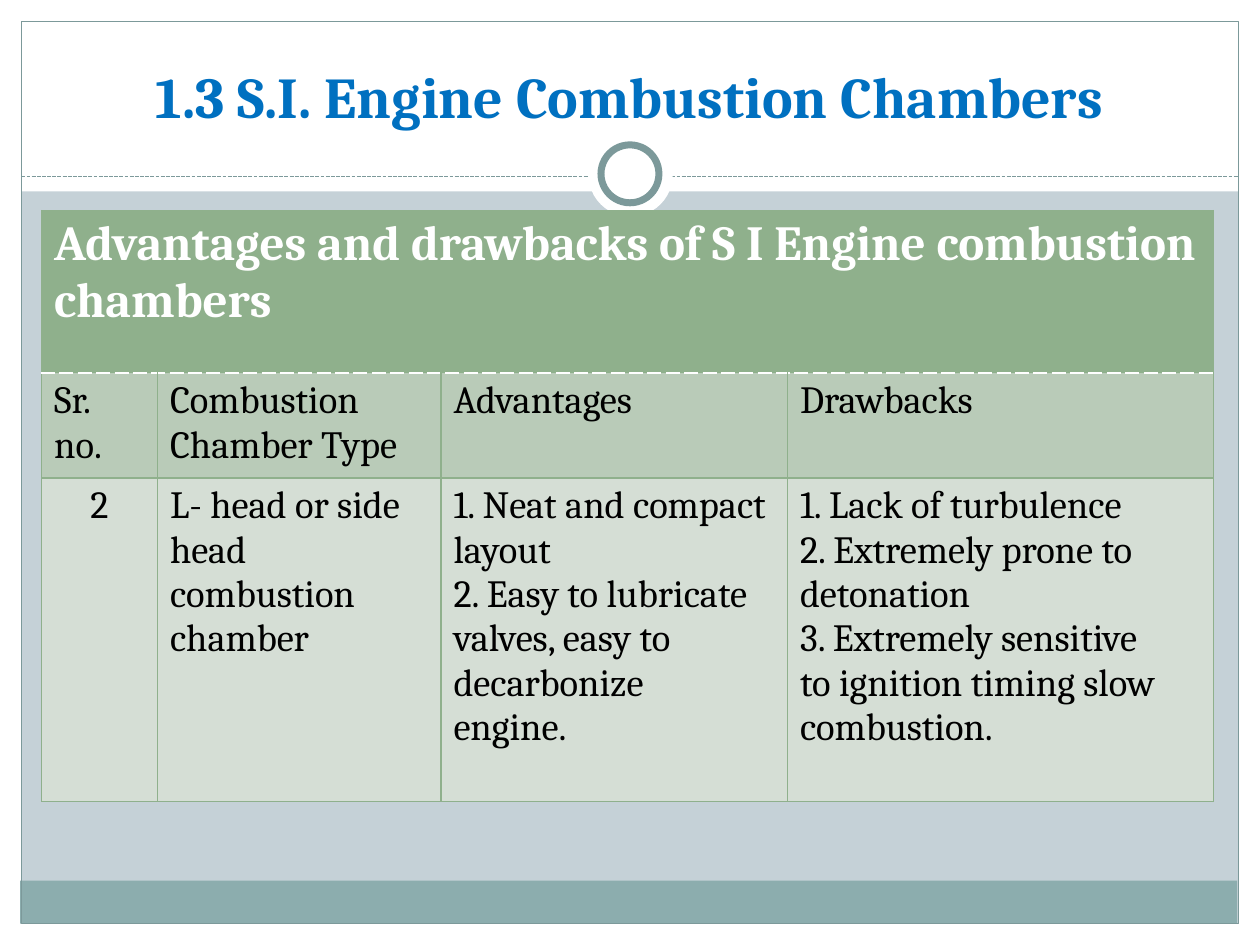
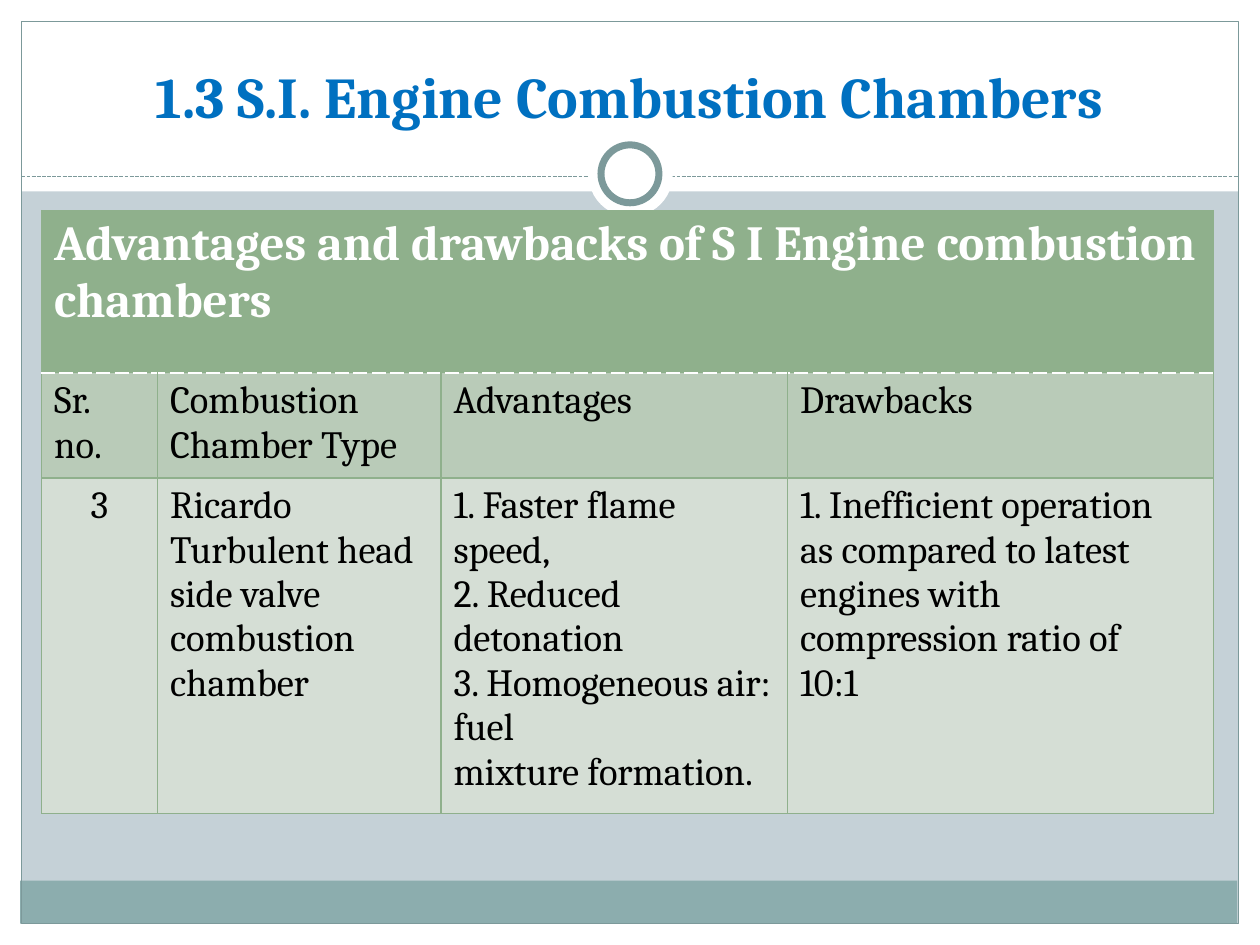
from lxml import etree
from pptx import Presentation
from pptx.dml.color import RGBColor
from pptx.enum.dml import MSO_LINE
from pptx.enum.shapes import MSO_CONNECTOR, MSO_SHAPE
from pptx.enum.text import MSO_ANCHOR, PP_ALIGN
from pptx.oxml.ns import qn
from pptx.util import Inches, Pt

FONT = "Cambria"
WHITE, BLACK = "FFFFFF", "000000"
BACKGROUND, FOOTER, FRAME = "C5D1D7", "8CADAE", "7C999A"
TITLE_BLUE = "0070C0"
GREEN, GREEN_MEDIUM, GREEN_LIGHT = "8FB08C", "B9CBB8", "D5DED5"

TITLE = "1.3 S.I. Engine Combustion Chambers"
TABLE_HEADING = "Advantages and drawbacks of S I Engine combustion chambers"
COLUMN_HEADINGS = ["Sr. no.", "Combustion Chamber Type", "Advantages", "Drawbacks"]
COLUMN_WIDTHS = [0.92, 2.25, 2.75, 3.38]
ROW_HEIGHTS = [1.29, 0.8, 2.57]

CHAMBERS = [
    [
        "2",
        "L- head or side head combustion chamber",
        "1. Neat and compact layout\n"
        "2. Easy to lubricate valves, easy to decarbonize\n"
        "engine.",
        "1. Lack of turbulence\n2. Extremely prone to\ndetonation\n"
        "3. Extremely sensitive\nto ignition timing slow\ncombustion.",
    ],
    [
        "3",
        "Ricardo Turbulent head side valve combustion chamber",
        "1. Faster flame speed,\n2. Reduced detonation\n"
        "3. Homogeneous air: fuel\nmixture formation.",
        "1. Inefficient operation\nas compared to latest\nengines with\n"
        "compression ratio of\n10:1",
    ],
]


def color(hex_string):
    return RGBColor.from_string(hex_string)


def set_borders(cell, top=(GREEN, 0.75, "solid"), bottom=(GREEN, 0.75, "solid")):
    """Draw all four cell borders; top and bottom are (colour, points, dash)."""
    side = (GREEN, 0.75, "solid")
    properties = cell._tc.get_or_add_tcPr()
    borders = {"a:lnL": side, "a:lnR": side, "a:lnT": top, "a:lnB": bottom}
    for position, (tag, (hex_string, points, dash)) in enumerate(borders.items()):
        line = etree.Element(qn(tag), w=str(Pt(points)))
        fill = etree.SubElement(line, qn("a:solidFill"))
        etree.SubElement(fill, qn("a:srgbClr"), val=hex_string)
        etree.SubElement(line, qn("a:prstDash"), val=dash)
        properties.insert(position, line)


class Deck:
    def __init__(self):
        self.presentation = Presentation()
        self.presentation.slide_width = Inches(10)
        self.presentation.slide_height = Inches(7.5)
        self.slide = None

    def add_slide(self):
        self.slide = self.presentation.slides.add_slide(self.presentation.slide_layouts[6])
        background = self.slide.background.fill
        background.solid()
        background.fore_color.rgb = color(BACKGROUND)
        self.add_frame()

    def add_shape(self, kind, box, fill=None, line=None, points=0.75):
        shape = self.slide.shapes.add_shape(kind, *map(Inches, box))
        shape.shadow.inherit = False
        if fill:
            shape.fill.solid()
            shape.fill.fore_color.rgb = color(fill)
        else:
            shape.fill.background()
        if line:
            shape.line.color.rgb = color(line)
            shape.line.width = Pt(points)
        else:
            shape.line.fill.background()

    def add_dashed_line(self, left, right, top):
        connector = self.slide.shapes.add_connector(
            MSO_CONNECTOR.STRAIGHT, Inches(left), Inches(top), Inches(right), Inches(top))
        connector.line.color.rgb = color(FRAME)
        connector.line.width = Pt(0.75)
        connector.line.dash_style = MSO_LINE.SQUARE_DOT
        etree.SubElement(connector._element.spPr, qn("a:effectLst"))

    def add_frame(self):
        """Add the white margins, footer band, outline and ring of every slide."""
        margins = [(0, 7.33, 10, 0.17), (0, 0, 10, 1.52),
                   (0, 0, 0.17, 7.5), (9.83, 0, 0.17, 7.5)]
        for margin in margins:
            self.add_shape(MSO_SHAPE.RECTANGLE, margin, WHITE)
        self.add_shape(MSO_SHAPE.RECTANGLE, (0.16, 6.99, 9.66, 0.34), FOOTER)
        self.add_shape(MSO_SHAPE.RECTANGLE, (0.17, 0.17, 9.66, 7.16), line=FRAME)
        self.add_dashed_line(0.17, 9.83, 1.4)
        self.add_shape(MSO_SHAPE.OVAL, (4.67, 1.05, 0.67, 0.67), WHITE)
        self.add_shape(MSO_SHAPE.OVAL, (4.77, 1.15, 0.46, 0.46), WHITE, FRAME, 4)

    def set_text(self, text_frame, text, size, hex_string, bold=False, align=PP_ALIGN.LEFT):
        text_frame.word_wrap = True
        text_frame.text = text
        for paragraph in text_frame.paragraphs:
            paragraph.alignment = align
            paragraph.font.name = FONT
            paragraph.font.size = Pt(size)
            paragraph.font.bold = bold
            paragraph.font.color.rgb = color(hex_string)

    def add_title(self, text):
        box = self.slide.shapes.add_textbox(
            Inches(0.33), Inches(0.25), Inches(9.33), Inches(0.83))
        box.text_frame.vertical_anchor = MSO_ANCHOR.BOTTOM
        self.set_text(box.text_frame, text, 33, TITLE_BLUE, True, PP_ALIGN.CENTER)

    def add_chamber_table(self, chamber):
        table = self.slide.shapes.add_table(
            len(ROW_HEIGHTS), len(COLUMN_WIDTHS), Inches(0.33), Inches(1.67),
            Inches(sum(COLUMN_WIDTHS)), Inches(sum(ROW_HEIGHTS))).table
        table.first_row = table.horz_banding = False
        for column, width in zip(table.columns, COLUMN_WIDTHS):
            column.width = Inches(width)
        for row, height in zip(table.rows, ROW_HEIGHTS):
            row.height = Inches(height)

        divider = (WHITE, 0.9, "sysDash")
        row_styles = [(GREEN, {"bottom": divider}),
                      (GREEN_MEDIUM, {"top": divider}),
                      (GREEN_LIGHT, {})]
        for row, (fill, borders) in zip(table.rows, row_styles):
            for cell in row.cells:
                cell.fill.solid()
                cell.fill.fore_color.rgb = color(fill)
                set_borders(cell, **borders)

        heading = table.cell(0, 0)
        heading.merge(table.cell(0, len(COLUMN_WIDTHS) - 1))
        self.set_text(heading.text_frame, TABLE_HEADING, 28, WHITE, bold=True)
        for row_index, texts in enumerate([COLUMN_HEADINGS, chamber], start=1):
            for column_index, text in enumerate(texts):
                is_number = row_index == 2 and column_index == 0
                self.set_text(table.cell(row_index, column_index).text_frame, text, 22, BLACK,
                              align=PP_ALIGN.CENTER if is_number else PP_ALIGN.LEFT)


def main():
    deck = Deck()
    for chamber in CHAMBERS:
        deck.add_slide()
        deck.add_title(TITLE)
        deck.add_chamber_table(chamber)
    deck.presentation.save("out.pptx")


if __name__ == "__main__":
    main()
